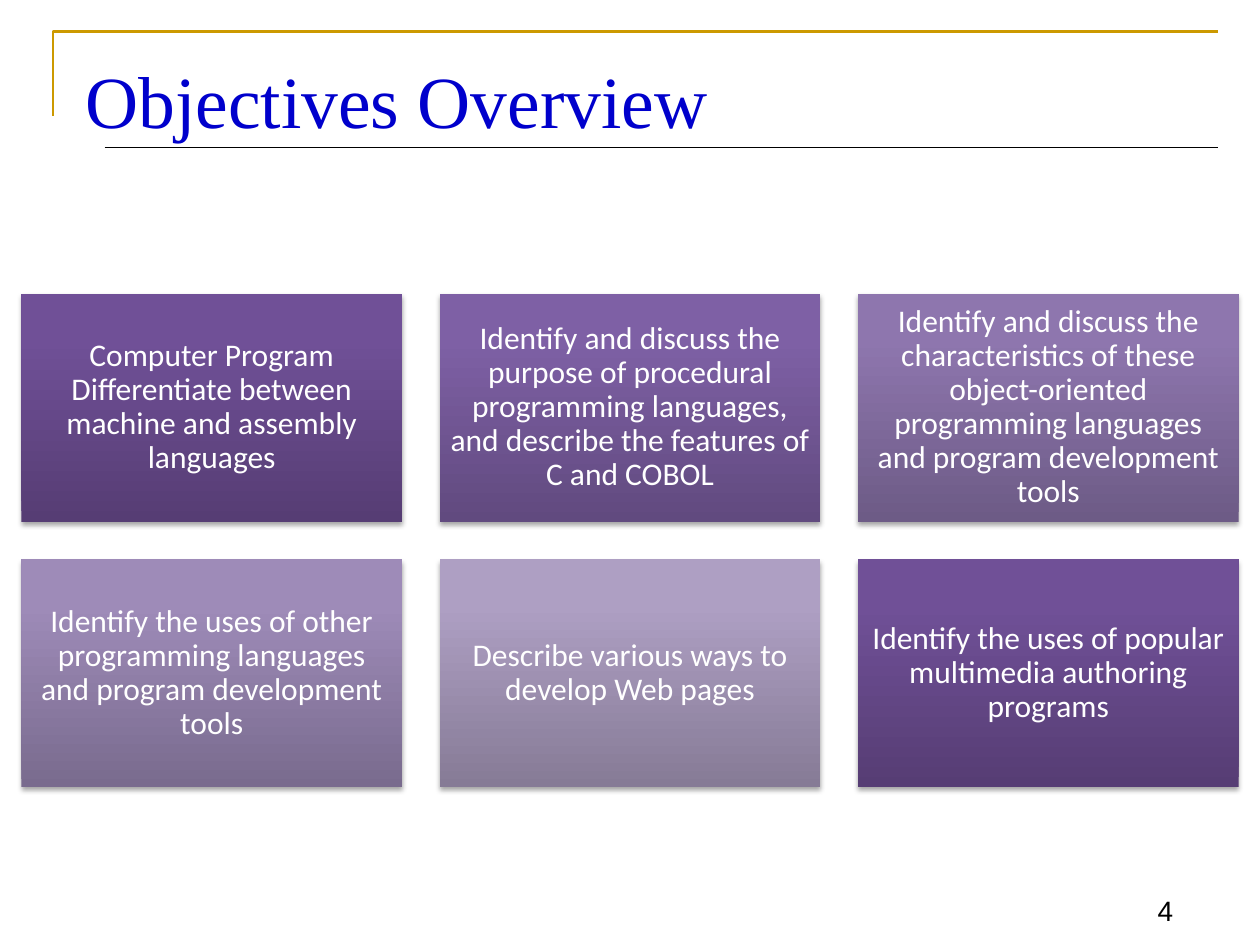
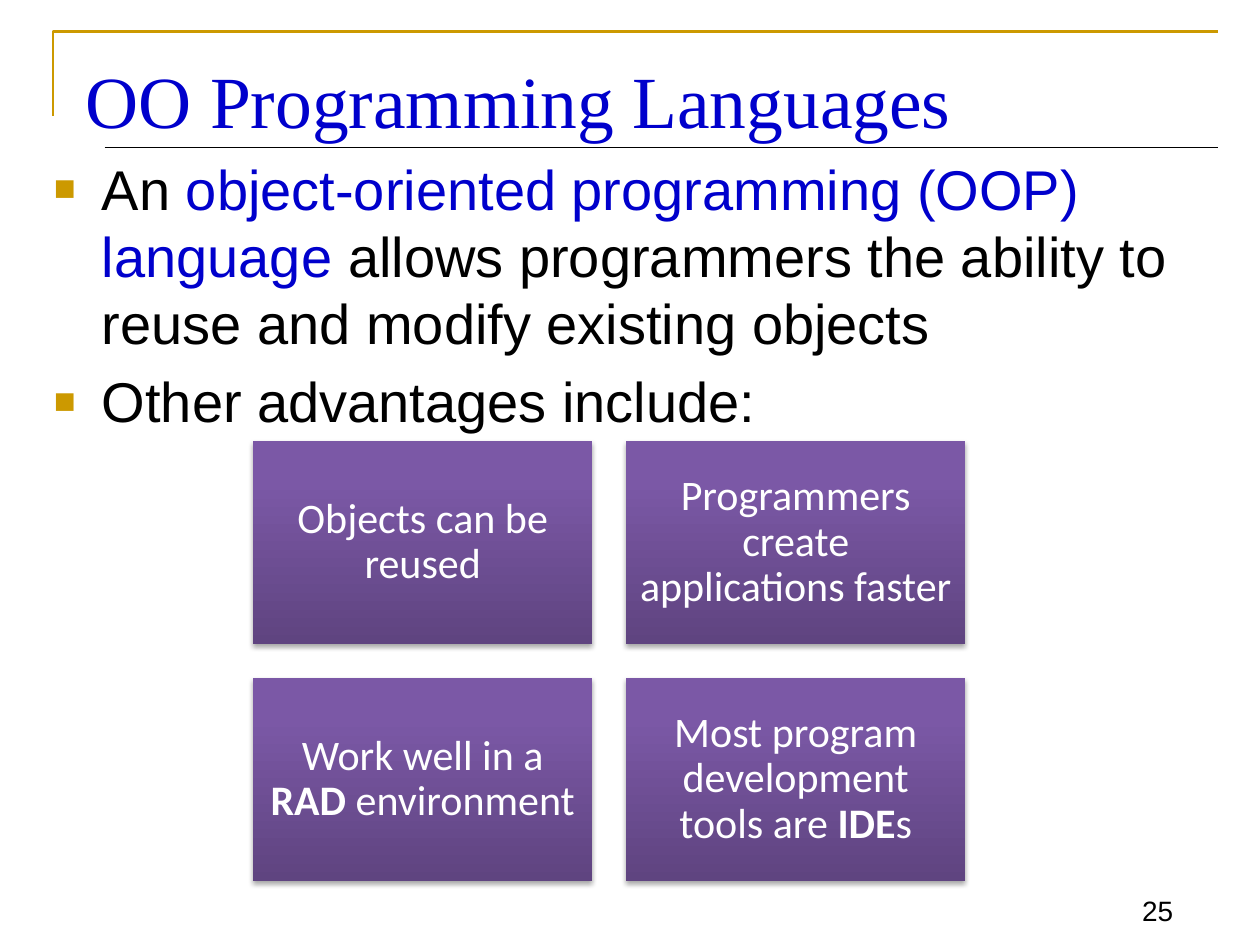
from dataclasses import dataclass
from itertools import cycle

from lxml.etree import SubElement as Sub
from pptx import Presentation
from pptx.dml.color import RGBColor as Rgb
from pptx.enum.shapes import MSO_CONNECTOR as Link, MSO_SHAPE as Form
from pptx.enum.text import MSO_ANCHOR as Anchor, PP_ALIGN as Align
from pptx.oxml.ns import qn
from pptx.util import Inches, Pt


@dataclass(frozen=True)
class Theme:
    gold: str = "CC9900"
    blue: str = "0000CC"
    black: str = "000000"
    white: str = "FFFFFF"
    serif: str = "Times New Roman"
    sans: str = "Arial"
    card: str = "Calibri"
    title: int = 42
    body: int = 32
    page: int = 16


T = Theme()

GOALS = dict(
    title="Objectives Overview",
    page="4",
    points=[],
    cards=[
        "Computer Program Differentiate between machine and assembly languages",
        "Identify and discuss the purpose of procedural programming languages, and describe the features of C and COBOL",
        "Identify and discuss the characteristics of these object-oriented programming languages and program development tools",
        "Identify the uses of other programming languages and program development tools",
        "Describe various ways to develop Web pages",
        "Identify the uses of popular multimedia authoring programs",
    ],
    tones=[("563D74", "705097"), ("614A7F", "7E60A5"), ("6D5B86", "8E76AE"),
           ("796B8E", "9E8BB8"), ("867B96", "AE9FC3")],
    grid=dict(cols=3, left=0.17, top=2.33, wide=3.02, high=1.81, gap=0.3),
    size=18,
    inset=0.07,
)

OOP = dict(
    title="OO Programming Languages",
    page="25",
    points=[
        ["An ", ("object-oriented programming (OOP) language ", dict(color=T.blue)),
         "allows programmers the ability to reuse and modify existing objects"],
        ["Other advantages include:"],
    ],
    cards=[
        "Objects can be reused",
        "Programmers create applications faster",
        ["Work well in a ", ("RAD", dict(bold=True)), " environment"],
        ["Most program development tools are ", ("IDE", dict(bold=True)), "s"],
    ],
    tones=[("5F4480", "7B58A6")],
    grid=dict(cols=2, left=2.01, top=3.5, wide=2.69, high=1.61, gap=0.27),
    size=24,
    inset=0.1,
)


def bullet(para):
    props = para._p.get_or_add_pPr()
    props.set("marL", str(Inches(0.38)))
    props.set("indent", str(-Inches(0.38)))
    tint = Sub(props, qn("a:buClr"))
    Sub(tint, qn("a:srgbClr"), val=T.gold)
    Sub(props, qn("a:buSzPct"), val="65000")
    Sub(props, qn("a:buFont"), typeface=T.sans)
    Sub(props, qn("a:buChar"), char="■")


def write(shape, paras, size, font, color=T.black, align=Align.LEFT,
          anchor=Anchor.TOP, inset=None, lead=None, before=0, marks=False):
    frame = shape.text_frame
    frame.word_wrap = True
    frame.vertical_anchor = anchor
    if inset is not None:
        frame.margin_left = frame.margin_right = Inches(inset)
        frame.margin_top = frame.margin_bottom = Inches(inset)
    for i, parts in enumerate(paras):
        para = frame.add_paragraph() if i else frame.paragraphs[0]
        para.alignment = align
        if lead:
            para.line_spacing = lead
        if i:
            para.space_before = Pt(before)
        if marks:
            bullet(para)
        for part in [parts] if isinstance(parts, str) else parts:
            words, look = (part, {}) if isinstance(part, str) else part
            run = para.add_run()
            run.text = words
            run.font.name, run.font.size = font, Pt(size)
            run.font.bold = look.get("bold", False)
            run.font.color.rgb = Rgb.from_string(look.get("color", color))


def area(slide, *spot):
    return slide.shapes.add_textbox(*map(Inches, spot))


def frame(slide, title, page):
    pen = slide.shapes.build_freeform(Inches(0.42), Inches(0.92))
    pen.add_line_segments([(Inches(0.42), Inches(0.25)),
                           (Inches(9.67), Inches(0.25))], close=False)
    edge = pen.convert_to_shape()
    edge.shadow.inherit = False
    edge.fill.background()
    rule = slide.shapes.add_connector(
        Link.STRAIGHT, *map(Inches, (0.83, 1.17, 9.67, 1.17)))
    Sub(rule._element.spPr, qn("a:effectLst"))
    for item, tint, wide in (edge, T.gold, 1.5), (rule, T.black, 0.75):
        item.line.color.rgb = Rgb.from_string(tint)
        item.line.width = Pt(wide)
    write(area(slide, 8.75, 6.92, 0.66, 0.49), [page], T.page, T.sans,
          align=Align.RIGHT, anchor=Anchor.BOTTOM)
    write(area(slide, 0.58, 0.39, 9.08, 0.75), [title], T.title, T.serif,
          color=T.blue)


def shade(shape):
    shape.shadow.inherit = False
    glow = Sub(shape._element.spPr.find(qn("a:effectLst")), qn("a:outerShdw"),
               blurRad=str(Pt(3.1)), dist=str(Pt(1.8)), dir="5400000",
               rotWithShape="0")
    ink = Sub(glow, qn("a:srgbClr"), val=T.black)
    Sub(ink, qn("a:alpha"), val="35000")


def tile(slide, cards, tones, size, inset, cols, left, top, wide, high, gap):
    for i, (words, pair) in enumerate(zip(cards, cycle(tones))):
        row, col = divmod(i, cols)
        spot = (left + col * (wide + gap), top + row * (high + gap), wide, high)
        box = slide.shapes.add_shape(Form.RECTANGLE, *map(Inches, spot))
        box.line.fill.background()
        box.fill.gradient()
        box.fill.gradient_angle = 90
        for stop, tint, place in zip(box.fill.gradient_stops, pair, (0, 0.8)):
            stop.color.rgb = Rgb.from_string(tint)
            stop.position = place
        shade(box)
        write(box, [words], size, T.card, color=T.white, align=Align.CENTER,
              anchor=Anchor.MIDDLE, inset=inset, lead=0.9)


def main():
    deck = Presentation()
    deck.slide_width, deck.slide_height = Inches(10), Inches(7.5)
    for data in GOALS, OOP:
        slide = deck.slides.add_slide(deck.slide_layouts[6])
        frame(slide, data["title"], data["page"])
        if data["points"]:
            write(area(slide, 0.33, 1.18, 9.33, 2.33), data["points"], T.body,
                  T.sans, lead=Pt(38.3), before=6.4, marks=True)
        tile(slide, data["cards"], data["tones"], data["size"], data["inset"],
             **data["grid"])
    deck.save("out.pptx")


if __name__ == "__main__":
    main()
